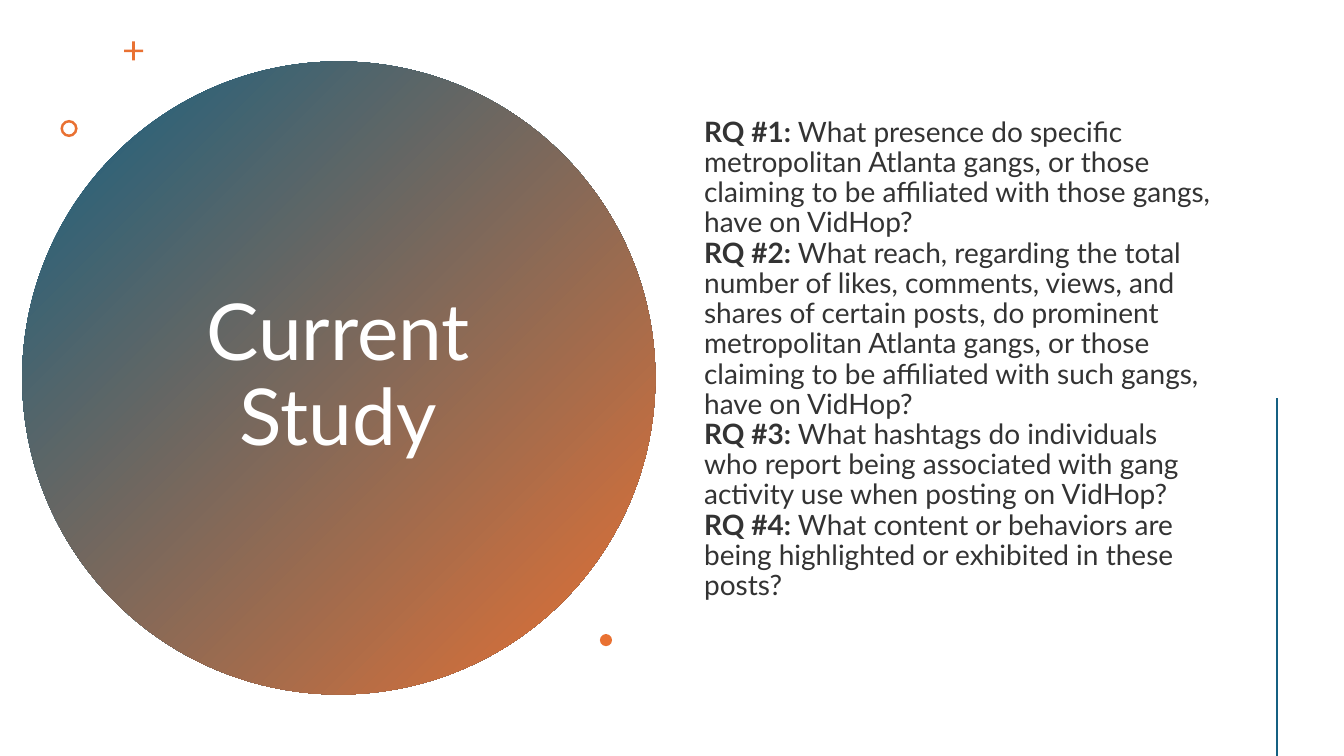
from dataclasses import dataclass

from lxml.etree import SubElement
from pptx import Presentation
from pptx.dml.color import RGBColor
from pptx.enum.shapes import MSO_CONNECTOR as Connector, MSO_SHAPE as Shape
from pptx.enum.text import MSO_ANCHOR as Anchor, MSO_AUTO_SIZE as AutoSize, PP_ALIGN as Align
from pptx.oxml.ns import qn
from pptx.util import Inches, Pt

COLUMNS, ROWS = 133.3, 75
CELL = Inches(0.1)
FONT = "Lato"
BLUE, ORANGE, WHITE, INK = "156082", "E97132", "FFFFFF", "333333"

QUESTIONS = [
    "What presence do specific metropolitan Atlanta gangs, or those claiming "
    "to be affiliated with those gangs, have on VidHop?",
    "What reach, regarding the total number of likes, comments, views, and "
    "shares of certain posts, do prominent metropolitan Atlanta gangs, or "
    "those claiming to be affiliated with such gangs, have on VidHop?",
    "What hashtags do individuals who report being associated with gang "
    "activity use when posting on VidHop?",
    "What content or behaviors are being highlighted or exhibited in these posts?",
]


@dataclass
class Box:
    """A rectangle measured in grid cells."""
    left: float
    top: float
    width: float
    height: float

    def inner(self, left, top, width, height):
        return Box(self.left + left, self.top + top, width, height)

    def lengths(self):
        return [round(side * CELL) for side in (self.left, self.top, self.width, self.height)]


def color(value):
    return RGBColor.from_string(value)


def add_span(para, text, size=20, ink=INK, bold=False):
    span = para.add_run()
    span.text = text
    span.font.name = FONT
    span.font.size = Pt(size)
    span.font.bold = bold
    span.font.color.rgb = color(ink)


def prepare_frame(frame):
    frame.word_wrap = True
    frame.auto_size = AutoSize.NONE
    frame.vertical_anchor = Anchor.MIDDLE


def add_figure(page, kind, box, fill=ORANGE, adjustment=None):
    figure = page.shapes.add_shape(kind, *box.lengths())
    figure.shadow.inherit = False
    figure.line.fill.background()
    figure.fill.solid()
    figure.fill.fore_color.rgb = color(fill)
    if adjustment is not None:
        figure.adjustments[0] = adjustment
    return figure


def add_title_disc(page, box, text):
    disc = add_figure(page, Shape.OVAL, box.inner(2.2, 6.1, 62.8, 62.8))
    disc.fill.gradient()
    disc.fill.gradient_angle = 315
    for stop, shade in zip(disc.fill.gradient_stops, (BLUE, ORANGE)):
        stop.color.rgb = color(shade)

    add_figure(page, Shape.CROSS, box.inner(12.3, 4.1, 1.9, 1.9), adjustment=0.43)
    add_figure(page, Shape.DONUT, box.inner(6, 11.9, 1.7, 1.7), adjustment=0.15)
    add_figure(page, Shape.OVAL, box.inner(59.5, 62.9, 1.2, 1.2))

    title = page.shapes.title
    title.left, title.top, title.width, title.height = box.inner(13.6, 14.1, 39.9, 46.7).lengths()
    page.shapes._spTree.append(title._element)  # bring the title in front of the disc
    prepare_frame(title.text_frame)
    para = title.text_frame.paragraphs[0]
    para.alignment = Align.CENTER
    para.line_spacing = 0.9
    add_span(para, text, size=56, ink=WHITE)


def add_questions(page, box, questions):
    frame = page.shapes.add_textbox(*box.inner(2.2, 5.7, 52.2, 60).lengths()).text_frame
    prepare_frame(frame)
    for number, question in enumerate(questions, 1):
        para = frame.paragraphs[0] if number == 1 else frame.add_paragraph()
        para.line_spacing = 0.9
        add_span(para, f"RQ #{number}: ", bold=True)
        add_span(para, question)


def add_side_rule(page, box):
    left, top, _, height = box.inner(60, 39.5, 0, box.height - 39.5).lengths()
    rule = page.shapes.add_connector(Connector.STRAIGHT, left, top, left, top + height)
    rule.line.color.rgb = color(BLUE)
    rule.line.width = Pt(2)
    SubElement(rule._element.spPr, qn("a:effectLst"))


def main():
    deck = Presentation()
    deck.slide_width = round(COLUMNS * CELL)
    deck.slide_height = ROWS * CELL
    page = deck.slides.add_slide(deck.slide_layouts[5])

    left_half = Box(0, 0, COLUMNS / 2, ROWS)
    right_half = Box(COLUMNS / 2, 0, COLUMNS / 2, ROWS)
    add_title_disc(page, left_half, "Current Study")
    add_questions(page, right_half, QUESTIONS)
    add_side_rule(page, right_half)
    deck.save("out.pptx")


if __name__ == "__main__":
    main()
